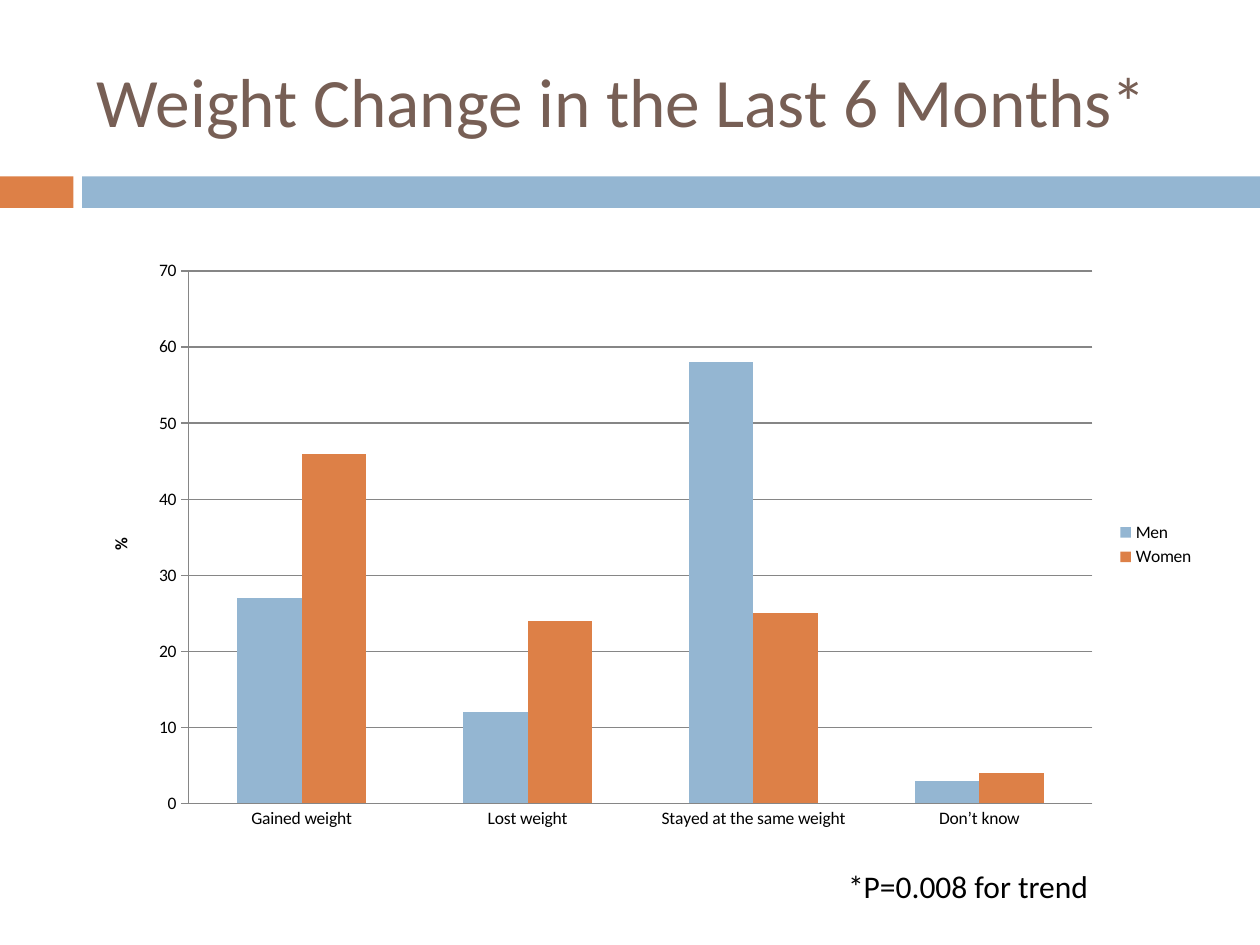
from pptx import Presentation
from pptx.chart.data import CategoryChartData
from pptx.dml.color import RGBColor
from pptx.enum import chart as ch, shapes, text
from pptx.util import Pt

FONT = "Calibri"
BLUE = RGBColor(0x94, 0xB6, 0xD2)
ORANGE = RGBColor(0xDD, 0x80, 0x47)
BROWN = RGBColor(0x77, 0x5F, 0x55)
GRAY = RGBColor(0x86, 0x86, 0x86)
BLACK = RGBColor(0, 0, 0)

CATEGORIES = ["Gained weight", "Lost weight", "Stayed at the same weight", "Don’t know"]
SERIES = [("Men", [27, 12, 58, 3], BLUE), ("Women", [46, 24, 25, 4], ORANGE)]


def set_font(font, size, color, bold=False):
    formats = {"name": FONT, "size": Pt(size), "bold": bold}
    for name, value in formats.items():
        setattr(font, name, value)
    font.color.rgb = color


def add_band(slide, left, top, width, height):
    """Orange block and blue bar, parted by a narrow gap."""
    block, gap = 42, 5
    bar = block + gap
    for x, w, color in [(left, block, ORANGE), (left + bar, width - bar, BLUE)]:
        sp = slide.shapes.add_shape(shapes.MSO_SHAPE.RECTANGLE, Pt(x), Pt(top), Pt(w), Pt(height))
        sp.shadow.inherit = False
        sp.fill.solid()
        sp.fill.fore_color.rgb = color
        sp.line.fill.background()


def set_title(slide, left, top, width, height):
    title = slide.shapes.title
    box = {"left": left, "top": top, "width": width, "height": height}
    for name, value in box.items():
        setattr(title, name, Pt(value))
    tf = title.text_frame
    tf.vertical_anchor = text.MSO_ANCHOR.MIDDLE
    p = tf.paragraphs[0]
    p.alignment = text.PP_ALIGN.LEFT
    r = p.add_run()
    r.text = "Weight Change in the Last 6 Months*"
    set_font(r.font, 39.6, BROWN)


def add_weight_chart(slide, left, top, width, height):
    data = CategoryChartData()
    data.categories = CATEGORIES
    for name, values, _ in SERIES:
        data.add_series(name, values)
    chart = slide.shapes.add_chart(ch.XL_CHART_TYPE.COLUMN_CLUSTERED, Pt(left), Pt(top),
                                   Pt(width), Pt(height), data).chart
    set_font(chart.font, 10, BLACK)
    chart.has_title = False
    chart.has_legend = True
    chart.legend.position = ch.XL_LEGEND_POSITION.RIGHT
    chart.legend.include_in_layout = False

    plot = chart.plots[0]
    plot.gap_width = 150
    plot.overlap = 0
    plot.vary_by_categories = False
    for series, (_, _, color) in zip(plot.series, SERIES):
        series.format.fill.solid()
        series.format.fill.fore_color.rgb = color

    percent = chart.value_axis
    formats = {"minimum_scale": 0, "maximum_scale": 70, "major_unit": 10,
               "has_major_gridlines": True, "major_tick_mark": ch.XL_TICK_MARK.OUTSIDE}
    for name, value in formats.items():
        setattr(percent, name, value)
    r = percent.axis_title.text_frame.paragraphs[0].add_run()
    r.text = "%"
    set_font(r.font, 10, BLACK, bold=True)
    chart.category_axis.major_tick_mark = ch.XL_TICK_MARK.NONE
    for part in (percent, chart.category_axis, percent.major_gridlines):
        part.format.line.color.rgb = GRAY
        part.format.line.width = Pt(0.75)


def add_footnote(slide, left, top, width, height):
    tf = slide.shapes.add_textbox(Pt(left), Pt(top), Pt(width), Pt(height)).text_frame
    tf.word_wrap = False
    tf.auto_size = text.MSO_AUTO_SIZE.SHAPE_TO_FIT_TEXT
    r = tf.paragraphs[0].add_run()
    r.text = "*P=0.008 for trend"
    set_font(r.font, 18, BLACK)


def main():
    prs = Presentation()
    prs.slide_width, prs.slide_height = Pt(720), Pt(540)
    slide = prs.slides.add_slide(prs.slide_layouts[5])
    add_band(slide, 0, 100.8, 720, 18)
    set_title(slide, 48, 18, 642, 78)
    add_weight_chart(slide, 48, 142.5, 642, 337.5)
    add_footnote(slide, 477.5, 492, 157, 29)
    prs.save("out.pptx")


if __name__ == "__main__":
    main()
